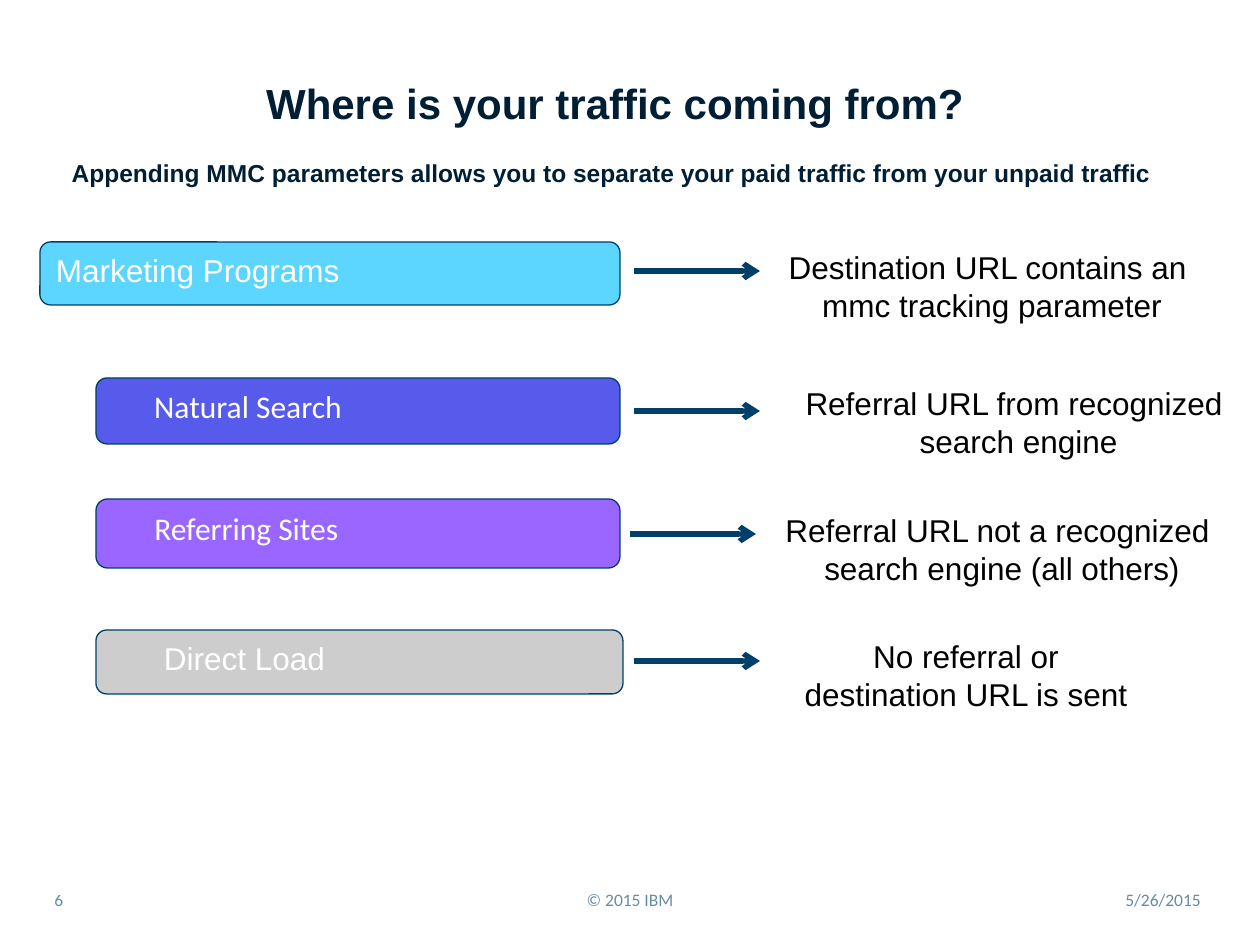
import pptx
import pptx.dml.color
import pptx.enum.shapes
import pptx.enum.text
import pptx.oxml
import pptx.oxml.ns
import pptx.util

EMU_PER_PX = 914400 / 126
COLORS = {
    "navy": "003F69",
    "heading": "001F34",
    "cyan": "5CD5FF",
    "indigo": "575BEB",
    "violet": "9966FF",
    "gray": "CDCDCD",
    "white": "FFFFFF",
    "black": "000000",
}
ALIGN = pptx.enum.text.PP_ALIGN
ANCHOR = pptx.enum.text.MSO_ANCHOR

# label, font, text inset, fill, bar box, arrow start, description lines, box, wrap
TRAFFIC_SOURCES = [
    ("Marketing Programs", "Arial", 13, "cyan", (40, 242, 580, 63), (634, 271),
     ["Destination URL contains an ", "mmc tracking parameter"], (774, 242, 436, 89), False),
    ("Natural Search", "Calibri", 55, "indigo", (96, 378, 524, 66), (634, 411),
     ["Referral URL from recognized ", "search engine"], (791, 378, 455, 89), False),
    ("Referring Sites", "Calibri", 55, "violet", (96, 499, 524, 69), (630, 534),
     ["Referral URL not a recognized ", "search engine (all others)"], (771, 505, 462, 89), False),
    ("Direct Load", "Arial", 65, "gray", (96, 630, 527, 64), (634, 661),
     ["No referral or destination URL is sent"], (791, 631, 350, 89), True),
]
ARROW_LENGTH = 126
FOOTERS = [
    ("5/26/2015", (1045, 878, 168, 42), ALIGN.RIGHT),
    ("© 2015 IBM", (378, 878, 504, 42), ALIGN.CENTER),
    ("6", (42, 881, 126, 38), ALIGN.LEFT),
]


def px(value):
    return pptx.util.Emu(round(value * EMU_PER_PX))


def rgb(name):
    return pptx.dml.color.RGBColor.from_string(COLORS[name])


def write(text_frame, text, size=18, font="Arial", color="black", bold=False,
          align=ALIGN.CENTER, line_spacing=None, opacity=None):
    """Write text as one paragraph, after any that the frame already holds."""
    paragraph = text_frame.paragraphs[0]
    if paragraph.runs:
        paragraph = text_frame.add_paragraph()
    paragraph.alignment = align
    if line_spacing:
        paragraph.line_spacing = pptx.util.Pt(line_spacing)
    run = paragraph.add_run()
    run.text = text
    run.font.size = pptx.util.Pt(size)
    run.font.name = font
    run.font.bold = bold
    run.font.color.rgb = rgb(color)
    if opacity:
        color_element = run.font.fill._xPr.find(".//" + pptx.oxml.ns.qn("a:srgbClr"))
        alpha = pptx.oxml.parse_xml(
            f'<a:alpha {pptx.oxml.ns.nsdecls("a")} val="{opacity * 1000}"/>')
        color_element.append(alpha)


def add_text_box(slide, box, anchor=ANCHOR.TOP, wrap=True):
    text_frame = slide.shapes.add_textbox(*map(px, box)).text_frame
    text_frame.word_wrap = wrap
    text_frame.vertical_anchor = anchor
    return text_frame


def add_bar(slide, box, fill, label, font, inset):
    shape = slide.shapes.add_shape(
        pptx.enum.shapes.MSO_SHAPE.ROUNDED_RECTANGLE, *map(px, box))
    shape.shadow.inherit = False
    shape.fill.solid()
    shape.fill.fore_color.rgb = rgb(fill)
    shape.line.color.rgb = rgb("navy")
    shape.line.width = pptx.util.Pt(0.75)
    shape.text_frame.vertical_anchor = ANCHOR.TOP
    shape.text_frame.margin_left = px(inset)
    write(shape.text_frame, label, font=font, color="white", align=ALIGN.LEFT)


def add_arrow(slide, left, top):
    connector = slide.shapes.add_connector(
        pptx.enum.shapes.MSO_CONNECTOR.STRAIGHT,
        px(left), px(top), px(left + ARROW_LENGTH), px(top))
    connector.line.color.rgb = rgb("navy")
    connector.line.width = pptx.util.Pt(3)
    namespace = pptx.oxml.ns.nsdecls("a")
    connector.line._get_or_add_ln().append(
        pptx.oxml.parse_xml(f'<a:tailEnd {namespace} type="arrow"/>'))
    connector._element.spPr.append(pptx.oxml.parse_xml(f"<a:effectLst {namespace}/>"))


def add_heading(slide):
    heading = add_text_box(slide, (33, 66, 1164, 123), anchor=ANCHOR.MIDDLE)
    lines = [
        ("Where is your traffic coming from?", 24),
        ("Appending MMC parameters allows you to separate your paid traffic "
         "from your unpaid traffic ", 14),
    ]
    for text, size in lines:
        write(heading, text, size=size, color="heading", bold=True, line_spacing=34)


def main():
    presentation = pptx.Presentation()
    presentation.slide_width = px(1260)
    presentation.slide_height = px(945)
    slide = presentation.slides.add_slide(presentation.slide_layouts[6])

    add_heading(slide)
    for label, font, inset, fill, bar, arrow, lines, box, wrap in TRAFFIC_SOURCES:
        add_bar(slide, bar, fill, label, font, inset)
        add_arrow(slide, *arrow)
        description = add_text_box(slide, box, wrap=wrap)
        for line in lines:
            write(description, line)
    for text, box, align in FOOTERS:
        footer = add_text_box(slide, box, anchor=ANCHOR.MIDDLE)
        write(footer, text, size=10, font="Calibri", color="navy", align=align, opacity=60)

    presentation.save("out.pptx")


if __name__ == "__main__":
    main()
